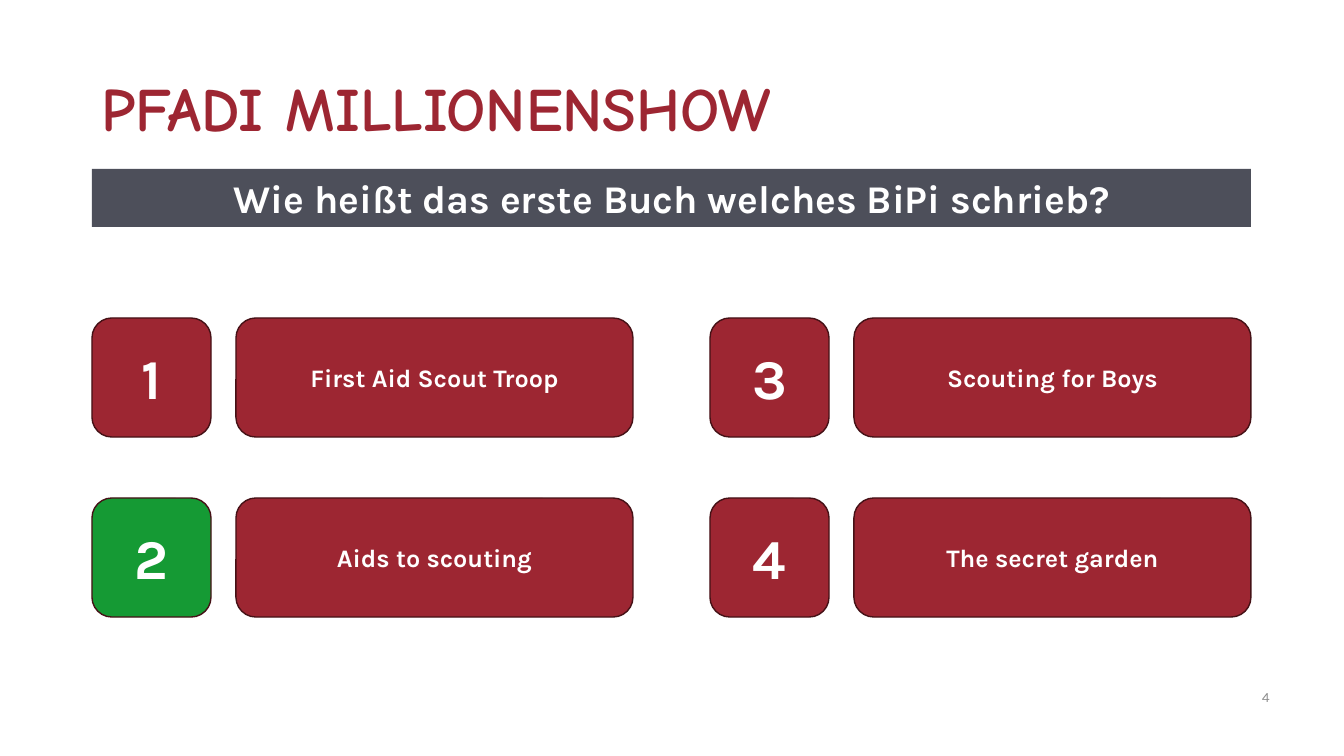
import pptx
import pptx.dml.color
import pptx.enum.shapes
import pptx.enum.text
import pptx.util

PX = 914400 / 100.8
COLORS = {
    "red": "9D2632",
    "green": "159A34",
    "outline": "451116",
    "slate": "4D4F5A",
    "white": "FFFFFF",
    "gray": "8C8C8C",
}
SHAPE = pptx.enum.shapes.MSO_SHAPE
ALIGN = pptx.enum.text.PP_ALIGN
LEFT, WIDTH = 92, 1159

prs = pptx.Presentation()
prs.slide_width = round(1344 * PX)
prs.slide_height = round(756 * PX)
s = prs.slides.add_slide(prs.slide_layouts[6])


def rgb(name):
    return pptx.dml.color.RGBColor.from_string(COLORS[name])


def add_label(box, text, size, color="white", fill=None, shape=None,
              outline=None, font="Karla", bold=True, align=ALIGN.CENTER):
    """Add a text box, or a filled preset shape, holding one line of text."""
    box = [round(v * PX) for v in box]
    if shape is None:
        sp = s.shapes.add_textbox(*box)
    else:
        sp = s.shapes.add_shape(shape, *box)
        sp.shadow.inherit = False
        sp.fill.solid()
        sp.fill.fore_color.rgb = rgb(fill)
        if outline:
            sp.line.color.rgb = rgb(outline)
            sp.line.width = pptx.util.Pt(1)
        else:
            sp.line.fill.background()
    tf = sp.text_frame
    tf.word_wrap = True
    tf.vertical_anchor = pptx.enum.text.MSO_ANCHOR.MIDDLE
    p = tf.paragraphs[0]
    p.alignment = align
    r = p.add_run()
    r.text = text
    r.font.size = pptx.util.Pt(size)
    r.font.name = font
    r.font.bold = bold
    r.font.color.rgb = rgb(color)
    return sp


title = add_label((LEFT, 39, WIDTH, 146), "PFADI MILLIONENSHOW", 44, "red",
                  font="Comic Neue", align=ALIGN.LEFT)
title.text_frame.paragraphs[0].line_spacing = 0.9

add_label((1252, 677, 92, 40), "4", 10, "gray", bold=False, align=ALIGN.LEFT)

question = add_label((LEFT, 169, WIDTH, 58),
                     "Wie heißt das erste Buch welches BiPi schrieb?", 28,
                     fill="slate", shape=SHAPE.RECTANGLE)
question.text_frame.vertical_anchor = pptx.enum.text.MSO_ANCHOR.TOP
question.text_frame.auto_size = pptx.enum.text.MSO_AUTO_SIZE.SHAPE_TO_FIT_TEXT

# Answers run down the left column, then down the right one.
ANSWERS = ["First Aid Scout Troop", "Aids to scouting",
           "Scouting for Boys", "The secret garden"]
CORRECT = 2
TILE, ANSWER_WIDTH, ANSWER_OFFSET = 119, 397, 144
COLUMN_STEP, ROW_STEP, TOP = 618, 180, 318

for i, answer in enumerate(ANSWERS):
    column, row = divmod(i, 2)
    x = LEFT + column * COLUMN_STEP
    y = TOP + row * ROW_STEP
    number = i + 1
    add_label((x, y, TILE, TILE), str(number), 40,
              fill="green" if number == CORRECT else "red",
              shape=SHAPE.ROUNDED_RECTANGLE, outline="outline")
    add_label((x + ANSWER_OFFSET, y, ANSWER_WIDTH, TILE), answer, 18,
              fill="red", shape=SHAPE.ROUNDED_RECTANGLE, outline="outline")

prs.save("out.pptx")
